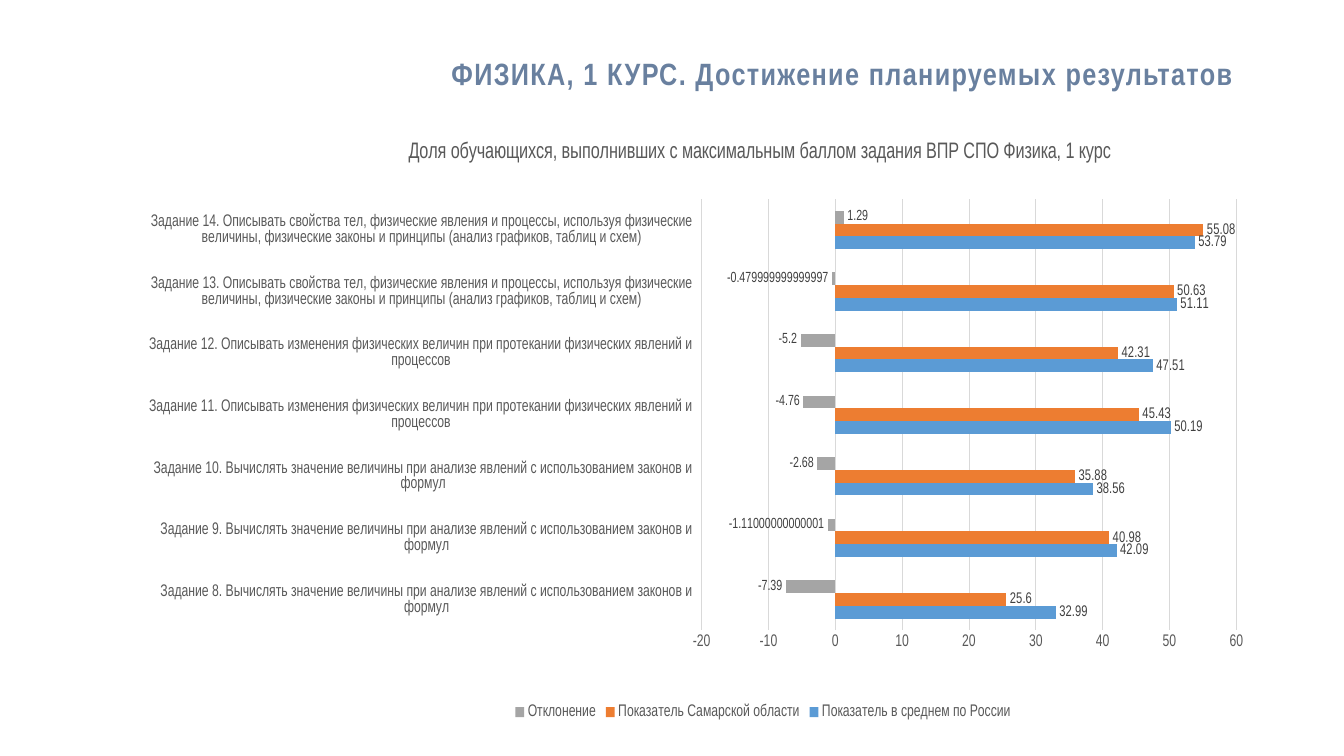
"""Build the slide on physics results: a title above a clustered bar chart by task."""
import pptx
import pptx.chart.data
import pptx.dml.color
import pptx.enum.chart
import pptx.enum.text
import pptx.oxml
import pptx.oxml.ns
import pptx.util

RGBColor = pptx.dml.color.RGBColor
TITLE_BLUE = RGBColor(0x69, 0x80, 0x9F)
TEXT_GRAY = RGBColor(0x59, 0x59, 0x59)
LABEL_GRAY = RGBColor(0x40, 0x40, 0x40)
GRID_GRAY = RGBColor(0xD9, 0xD9, 0xD9)
BLUE = RGBColor(0x5B, 0x9B, 0xD5)
ORANGE = RGBColor(0xED, 0x7D, 0x31)
GRAY = RGBColor(0xA5, 0xA5, 0xA5)
FONT_NAME = "Arial Narrow"
EMU_PER_PX = 914400 / 100.8

CALCULATE = "Вычислять значение величины при анализе явлений с использованием законов и формул"
CHANGES = "Описывать изменения физических величин при протекании физических явлений и процессов"
PROPERTIES = (
    "Описывать свойства тел, физические явления и процессы, используя физические "
    "величины, физические законы и принципы (анализ графиков, таблиц и схем)"
)
SKILLS = [CALCULATE] * 3 + [CHANGES] * 2 + [PROPERTIES] * 2
SERIES = [
    ("Показатель в среднем по России", BLUE, 11,
     [32.99, 42.09, 38.56, 50.19, 47.51, 51.11, 53.79]),
    ("Показатель Самарской области", ORANGE, 11,
     [25.6, 40.98, 35.88, 45.43, 42.31, 50.63, 55.08]),
    ("Отклонение", GRAY, 10.5,
     [-7.39, -1.11000000000001, -2.68, -4.76, -5.2, -0.479999999999997, 1.29]),
]


def format_font(font, size, color, bold=False):
    """Apply the slide's typeface with a size in points and a colour."""
    font.name = FONT_NAME
    font.size = pptx.util.Pt(size)
    font.bold = bold
    font.color.rgb = color


def place_in_chart(element, index, **settings):
    """Give a chart part a manual layout in fractions of the chart."""
    for layout in element.findall(pptx.oxml.ns.qn("c:layout")):
        element.remove(layout)
    entries = "".join(f'<c:{name} val="{value}"/>' for name, value in settings.items())
    element.insert(index, pptx.oxml.parse_xml(
        f'<c:layout {pptx.oxml.ns.nsdecls("c")}>'
        f"<c:manualLayout>{entries}</c:manualLayout></c:layout>"
    ))


presentation = pptx.Presentation()
presentation.slide_width = round(1344 * EMU_PER_PX)
presentation.slide_height = round(756 * EMU_PER_PX)
slide = presentation.slides.add_slide(presentation.slide_layouts[5])

chart_data = pptx.chart.data.CategoryChartData()
chart_data.categories = [
    f"Задание {number}. {skill}" for number, skill in enumerate(SKILLS, start=8)
]
for name, color, label_size, values in SERIES:
    chart_data.add_series(name, values)

chart_box = [round(length * EMU_PER_PX) for length in (149, 120, 1102, 604)]
chart = slide.shapes.add_chart(
    pptx.enum.chart.XL_CHART_TYPE.BAR_CLUSTERED, *chart_box, chart_data
).chart
format_font(chart.font, 10, RGBColor(0, 0, 0))

chart.has_title = True
chart_title = chart.chart_title
chart_title.include_in_layout = False
paragraph = chart_title.text_frame.paragraphs[0]
paragraph.text = "Доля обучающихся, выполнивших с максимальным баллом задания ВПР СПО Физика, 1 курс"
format_font(paragraph.font, 16, TEXT_GRAY)
place_in_chart(chart_title._element, 1, xMode="edge", yMode="edge", x=0.133, y=0.027)

chart.has_legend = True
legend = chart.legend
legend.position = pptx.enum.chart.XL_LEGEND_POSITION.BOTTOM
legend.include_in_layout = False
format_font(legend.font, 12, TEXT_GRAY)

plot = chart.plots[0]
plot.gap_width = 182
plot.vary_by_categories = False
place_in_chart(
    plot._element.getparent(), 0, layoutTarget="inner", xMode="edge", yMode="edge",
    x=0.437, y=0.131, w=0.548, h=0.714,
)
for series, (name, color, label_size, values) in zip(plot.series, SERIES):
    series.format.fill.solid()
    series.format.fill.fore_color.rgb = color
    series.invert_if_negative = False
    labels = series.data_labels
    labels.show_value = True
    labels.position = pptx.enum.chart.XL_LABEL_POSITION.OUTSIDE_END
    format_font(labels.font, label_size, LABEL_GRAY)

category_axis, value_axis = chart.category_axis, chart.value_axis
for axis in (category_axis, value_axis):
    axis.major_tick_mark = pptx.enum.chart.XL_TICK_MARK.NONE
    axis.minor_tick_mark = pptx.enum.chart.XL_TICK_MARK.NONE
    format_font(axis.tick_labels.font, 12, TEXT_GRAY)
category_axis.tick_label_position = pptx.enum.chart.XL_TICK_LABEL_POSITION.LOW
value_axis.minimum_scale = -20
value_axis.maximum_scale = 60
value_axis.major_unit = 10
value_axis.has_major_gridlines = True
value_axis.format.line.fill.background()
for line in (category_axis.format.line, value_axis.major_gridlines.format.line):
    line.color.rgb = GRID_GRAY
    line.width = pptx.util.Pt(0.75)

title = slide.shapes.title
title.left, title.top, title.width, title.height = [
    round(length * EMU_PER_PX) for length in (93, 40, 1159, 71)
]
title.text_frame.auto_size = pptx.enum.text.MSO_AUTO_SIZE.NONE
title.text_frame.vertical_anchor = pptx.enum.text.MSO_ANCHOR.MIDDLE
paragraph = title.text_frame.paragraphs[0]
paragraph.text = "ФИЗИКА, 1 КУРС. Достижение планируемых результатов "
paragraph.alignment = pptx.enum.text.PP_ALIGN.RIGHT
paragraph.line_spacing = 0.9
format_font(paragraph.font, 22, TITLE_BLUE, bold=True)
paragraph.font._element.set("spc", "100")

presentation.save("out.pptx")
